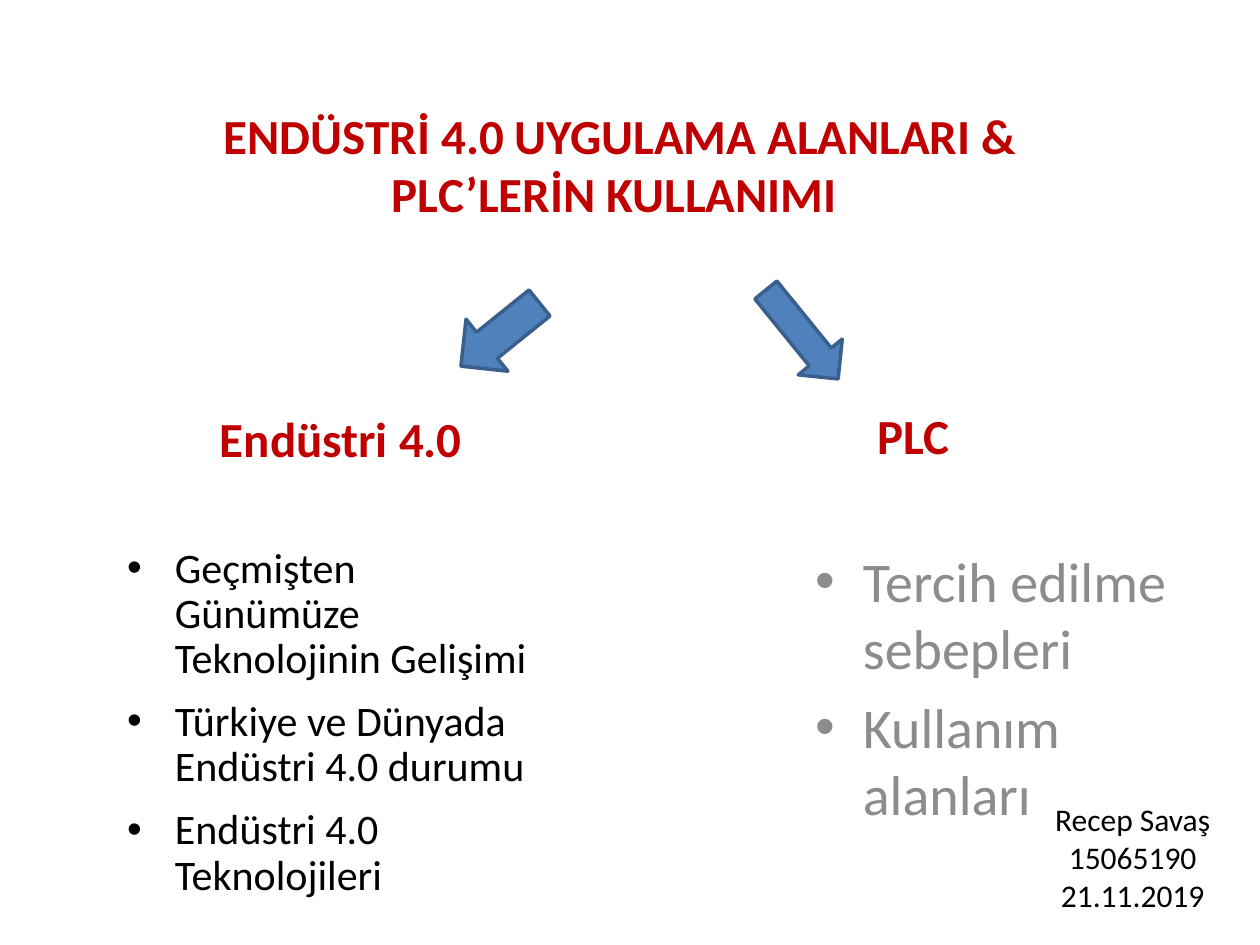
from dataclasses import dataclass

from lxml.etree import SubElement
from pptx import Presentation
from pptx.dml.color import RGBColor
from pptx.enum.shapes import MSO_SHAPE
from pptx.enum.text import MSO_ANCHOR, MSO_AUTO_SIZE, PP_ALIGN
from pptx.oxml.ns import qn
from pptx.slide import Slide
from pptx.util import Inches, Pt


@dataclass(frozen=True)
class Theme:
    font: str = "Calibri"
    bullet_font: str = "Arial"
    heading: RGBColor = RGBColor(0xC0, 0x00, 0x00)
    body: RGBColor = RGBColor(0x00, 0x00, 0x00)
    muted: RGBColor = RGBColor(0x8C, 0x8C, 0x8C)
    arrow_fill: RGBColor = RGBColor(0x4F, 0x81, 0xBD)
    arrow_line: RGBColor = RGBColor(0x3A, 0x5F, 0x8C)
    heading_size: int = 28
    large_size: int = 32
    body_size: int = 24
    author_size: int = 18


THEME = Theme()


@dataclass(frozen=True)
class Box:
    left: float
    top: float
    width: float
    height: float

    def lengths(self) -> list:
        return [Inches(n) for n in (self.left, self.top, self.width, self.height)]


@dataclass(frozen=True)
class TextBlock:
    box: Box
    lines: tuple[str, ...]
    size: int
    color: RGBColor
    bold: bool = False
    bulleted: bool = False
    anchor: MSO_ANCHOR = MSO_ANCHOR.TOP
    auto_size: MSO_AUTO_SIZE = MSO_AUTO_SIZE.NONE
    line_spacing: float = 1.0
    gap: float = 0


@dataclass(frozen=True)
class Arrow:
    box: Box
    rotation: float


def heading(box: Box, text: str, **options) -> TextBlock:
    return TextBlock(box, (text,), THEME.heading_size, THEME.heading, bold=True, **options)


GROW = MSO_AUTO_SIZE.SHAPE_TO_FIT_TEXT

TEXT_BLOCKS = (
    # Title
    heading(Box(1.17, 1.04, 7.5, 0.52),
            "ENDÜSTRİ 4.0 UYGULAMA ALANLARI & PLC’LERİN KULLANIMI ",
            anchor=MSO_ANCHOR.MIDDLE),
    # Branch headings
    heading(Box(1.58, 3.19, 2.25, 0.57), "Endüstri 4.0", auto_size=GROW),
    heading(Box(6.17, 3.17, 2.25, 0.57), "PLC ", auto_size=GROW),
    # Branch topics
    TextBlock(Box(0.91, 4.29, 3.51, 2.6),
              ("Geçmişten Günümüze Teknolojinin Gelişimi",
               "Türkiye ve Dünyada Endüstri 4.0 durumu",
               "Endüstri 4.0 Teknolojileri"),
              THEME.body_size, THEME.body, bulleted=True, line_spacing=0.9, gap=10),
    TextBlock(Box(6.37, 4.29, 3.51, 2.6),
              ("Tercih edilme sebepleri", "Kullanım alanları"),
              THEME.large_size, THEME.muted, bulleted=True, gap=6.4),
    # Author
    TextBlock(Box(7.97, 6.3, 2.04, 1.01),
              ("Recep Savaş", "15065190", "21.11.2019"),
              THEME.author_size, THEME.body, auto_size=GROW),
)

ARROWS = (
    Arrow(Box(3.57, 2.39, 0.8, 0.53), 141.2),
    Arrow(Box(5.91, 2.43, 0.91, 0.45), 50.9),
)


def set_format(target, values: dict) -> None:
    for name, value in values.items():
        setattr(target, name, value)


def add_bullet(paragraph) -> None:
    properties = paragraph._p.get_or_add_pPr()
    properties.set("marL", str(Inches(0.38)))
    properties.set("indent", str(Inches(-0.38)))
    SubElement(properties, qn("a:buFont"), typeface=THEME.bullet_font)
    SubElement(properties, qn("a:buChar"), char="•")


def add_text(slide: Slide, block: TextBlock) -> None:
    frame = slide.shapes.add_textbox(*block.box.lengths()).text_frame
    set_format(frame, {"word_wrap": True, "auto_size": block.auto_size,
                       "vertical_anchor": block.anchor})
    for index, line in enumerate(block.lines):
        paragraph = frame.paragraphs[0] if index == 0 else frame.add_paragraph()
        if block.bulleted:
            add_bullet(paragraph)
        set_format(paragraph, {
            "alignment": PP_ALIGN.LEFT if block.bulleted else PP_ALIGN.CENTER,
            "line_spacing": block.line_spacing,
            "space_before": Pt(block.gap if index else 0),
        })
        run = paragraph.add_run()
        run.text = line
        set_format(run.font, {"name": THEME.font, "size": Pt(block.size),
                              "bold": block.bold})
        run.font.color.rgb = block.color


def add_arrow(slide: Slide, arrow: Arrow) -> None:
    shape = slide.shapes.add_shape(MSO_SHAPE.RIGHT_ARROW, *arrow.box.lengths())
    shape.rotation = arrow.rotation
    shape.shadow.inherit = False
    shape.fill.solid()
    shape.fill.fore_color.rgb = THEME.arrow_fill
    shape.line.color.rgb = THEME.arrow_line
    shape.line.width = Pt(2)


def main() -> None:
    presentation = Presentation()
    set_format(presentation, {"slide_width": Inches(10), "slide_height": Inches(7.5)})
    slide = presentation.slides.add_slide(presentation.slide_layouts[6])
    for arrow in ARROWS:
        add_arrow(slide, arrow)
    for block in TEXT_BLOCKS:
        add_text(slide, block)
    presentation.save("out.pptx")


if __name__ == "__main__":
    main()
